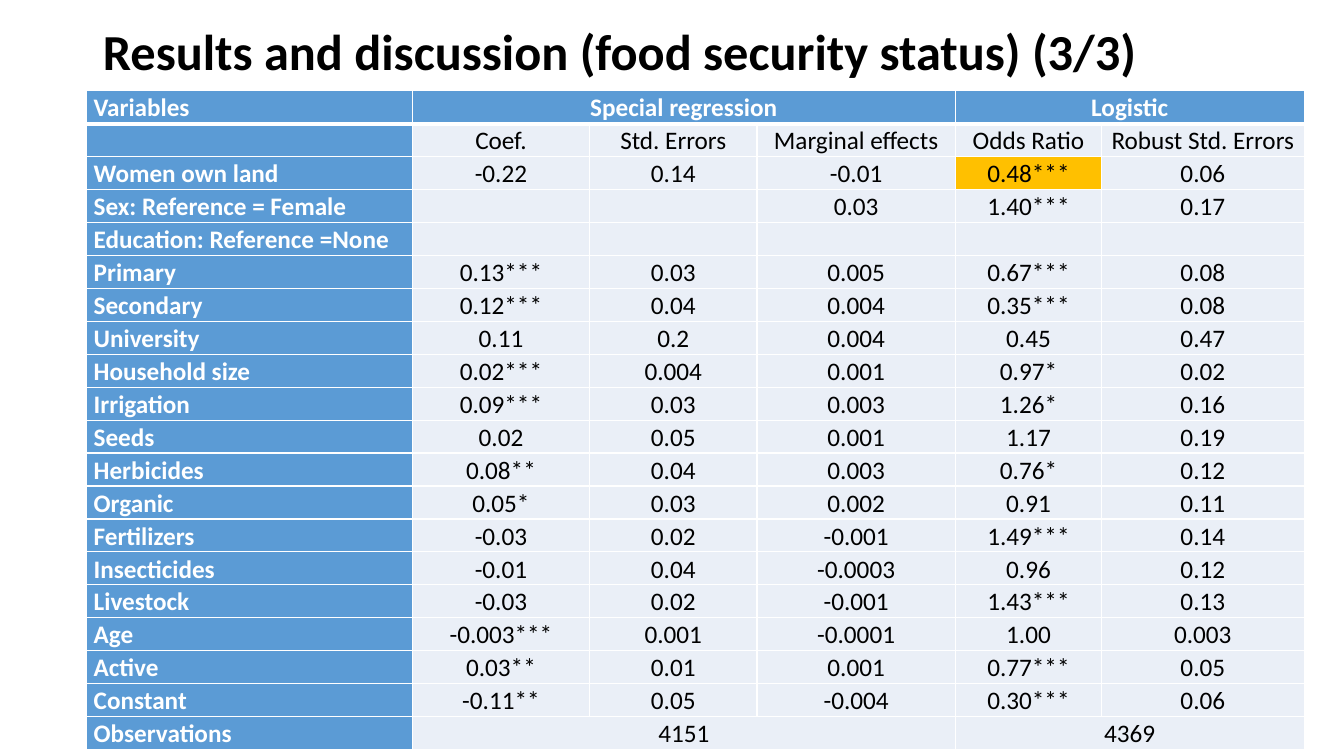
from dataclasses import dataclass

from lxml import etree
from pptx import Presentation
from pptx.dml.color import RGBColor
from pptx.enum.text import MSO_ANCHOR, MSO_AUTO_SIZE, PP_ALIGN
from pptx.oxml.ns import qn
from pptx.util import Pt

LEFT, CENTER = PP_ALIGN.LEFT, PP_ALIGN.CENTER
MIDDLE = MSO_ANCHOR.MIDDLE
NO_AUTOFIT = MSO_AUTO_SIZE.NONE
TITLE_ONLY = 5


@dataclass(frozen=True)
class Theme:
    font: str = "Calibri"
    title_size: float = 36
    table_size: float = 18
    text: str = "000000"
    white: str = "FFFFFF"
    heading_fill: str = "5B9BD5"
    value_fill: str = "EAEFF7"
    highlight_fill: str = "FFC000"
    thin_line: float = 1
    thick_line: float = 3


THEME = Theme()
TITLE = "Results and discussion (food security status) (3/3)"
COLUMN_WIDTHS = [232.6, 126.7, 119.5, 141.8, 104.4, 144.7]
ROW_HEIGHT = 23.1
CELL_INSET = 5.04
RESULTS = [
    ["Variables", "Special regression", "", "", "Logistic", ""],
    ["", "Coef.", "Std. Errors", "Marginal effects", "Odds Ratio", "Robust Std. Errors"],
    ["Women own land", "-0.22", "0.14", "-0.01", "0.48***", "0.06"],
    ["Sex: Reference = Female", "", "", "0.03", "1.40***", "0.17"],
    ["Education: Reference =None", "", "", "", "", ""],
    ["Primary", "0.13***", "0.03", "0.005", "0.67***", "0.08"],
    ["Secondary", "0.12***", "0.04", "0.004", "0.35***", "0.08"],
    ["University", "0.11", "0.2", "0.004", "0.45", "0.47"],
    ["Household size", "0.02***", "0.004", "0.001", "0.97*", "0.02"],
    ["Irrigation", "0.09***", "0.03", "0.003", "1.26*", "0.16"],
    ["Seeds", "0.02", "0.05", "0.001", "1.17", "0.19"],
    ["Herbicides", "0.08**", "0.04", "0.003", "0.76*", "0.12"],
    ["Organic", "0.05*", "0.03", "0.002", "0.91", "0.11"],
    ["Fertilizers", "-0.03", "0.02", "-0.001", "1.49***", "0.14"],
    ["Insecticides", "-0.01", "0.04", "-0.0003", "0.96", "0.12"],
    ["Livestock", "-0.03", "0.02", "-0.001", "1.43***", "0.13"],
    ["Age", "-0.003***", "0.001", "-0.0001", "1.00", "0.003"],
    ["Active", "0.03**", "0.01", "0.001", "0.77***", "0.05"],
    ["Constant", "-0.11**", "0.05", "-0.004", "0.30***", "0.06"],
    ["Observations", "4151", "", "", "4369", ""],
]
LAST_ROW = len(RESULTS) - 1
MODEL_COLUMNS = [(1, 3), (4, 5)]
HIGHLIGHTED_CELL = (2, 4)


def add_run(paragraph, text, size, color, bold):
    run = paragraph.add_run()
    run.text = text
    run.font.name = THEME.font
    run.font.size = Pt(size)
    run.font.bold = bold
    run.font.color.rgb = RGBColor.from_string(color)


def set_title(slide, text):
    title = slide.shapes.title
    title.left, title.top, title.width, title.height = Pt(66.24), Pt(12.96), Pt(828), Pt(51.84)
    frame = title.text_frame
    frame.auto_size = NO_AUTOFIT
    frame.vertical_anchor = MIDDLE
    paragraph = frame.paragraphs[0]
    paragraph.alignment = LEFT
    paragraph.line_spacing = 0.9
    add_run(paragraph, text, THEME.title_size, THEME.text, True)


def set_borders(cell, top, bottom):
    """Draw white cell borders; must run before the cell gets its fill."""
    properties = cell._tc.get_or_add_tcPr()
    widths = {"a:lnL": THEME.thin_line, "a:lnR": THEME.thin_line, "a:lnT": top, "a:lnB": bottom}
    for tag, width in widths.items():
        line = etree.SubElement(properties, qn(tag), w=str(Pt(width)))
        fill = etree.SubElement(line, qn("a:solidFill"))
        etree.SubElement(fill, qn("a:srgbClr"), val=THEME.white)


def format_cell(cell, text, row, column):
    is_heading = row == 0 or column == 0
    thin, thick = THEME.thin_line, THEME.thick_line
    set_borders(cell, thick if row == 1 else thin, thick if row == 0 else thin)
    if (row, column) == HIGHLIGHTED_CELL:
        color = THEME.highlight_fill
    else:
        color = THEME.heading_fill if is_heading else THEME.value_fill
    cell.fill.solid()
    cell.fill.fore_color.rgb = RGBColor.from_string(color)
    cell.margin_left = cell.margin_right = Pt(CELL_INSET)
    cell.margin_top = cell.margin_bottom = Pt(0)
    paragraph = cell.text_frame.paragraphs[0]
    paragraph.alignment = LEFT if column == 0 else CENTER
    paragraph.line_spacing = 1.07
    paragraph.font.size = Pt(THEME.table_size)
    if text:
        text_color = THEME.white if is_heading else THEME.text
        add_run(paragraph, text, THEME.table_size, text_color, is_heading)


def add_results_table(slide):
    frame = slide.shapes.add_table(
        len(RESULTS), len(COLUMN_WIDTHS), Pt(61.92), Pt(64.8),
        Pt(sum(COLUMN_WIDTHS)), Pt(ROW_HEIGHT * len(RESULTS)))
    table = frame.table
    table.horz_banding = False
    for column, width in zip(table.columns, COLUMN_WIDTHS):
        column.width = Pt(width)
    for row in table.rows:
        row.height = Pt(ROW_HEIGHT)
    for row, texts in enumerate(RESULTS):
        for column, text in enumerate(texts):
            format_cell(table.cell(row, column), text, row, column)
    for row in (0, LAST_ROW):
        for first, last in MODEL_COLUMNS:
            table.cell(row, first).merge(table.cell(row, last))


def main():
    presentation = Presentation()
    presentation.slide_width, presentation.slide_height = Pt(960), Pt(540)
    slide = presentation.slides.add_slide(presentation.slide_layouts[TITLE_ONLY])
    set_title(slide, TITLE)
    add_results_table(slide)
    presentation.save("out.pptx")


if __name__ == "__main__":
    main()
